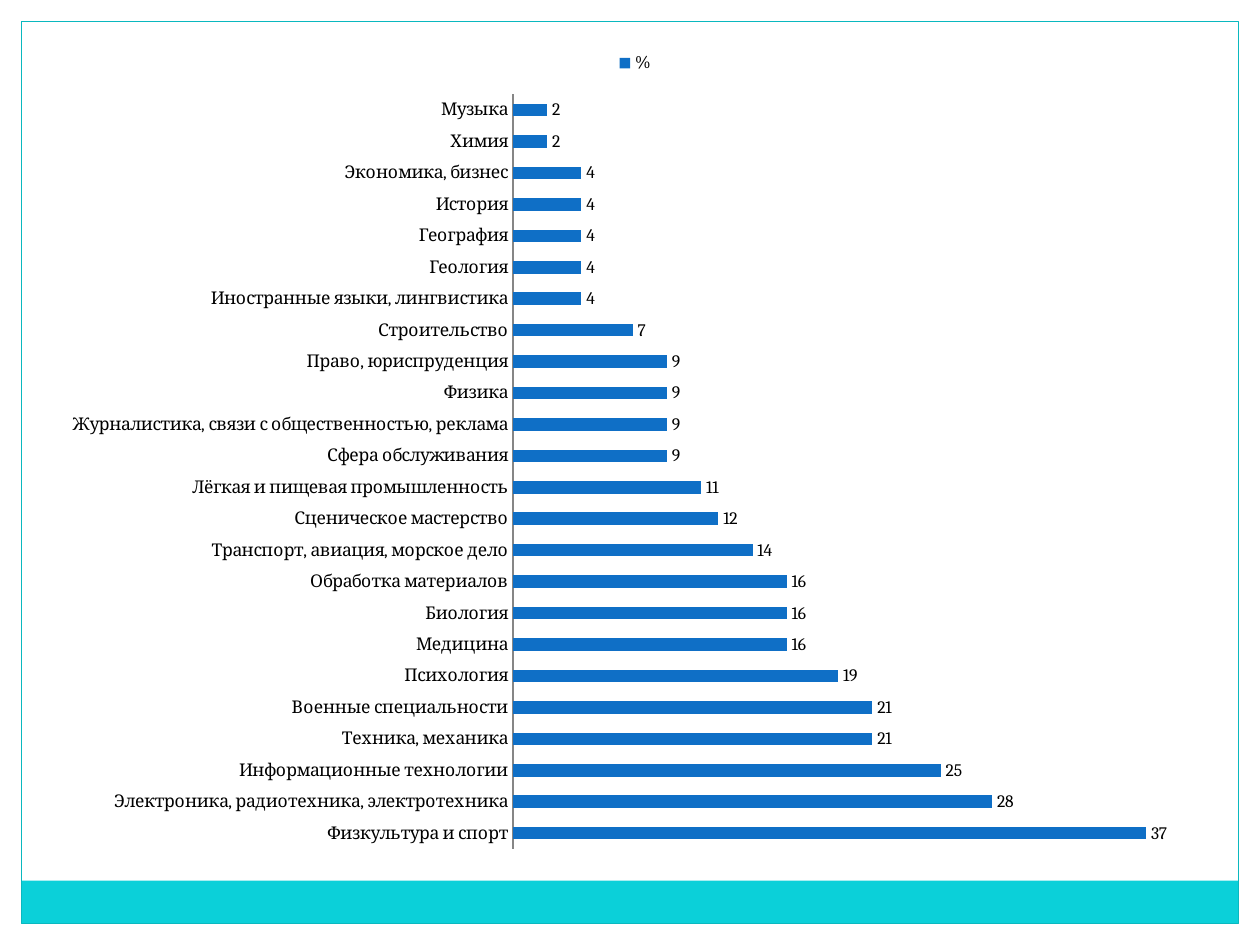
"""Build a slide with a framed bar chart of fields of interest, in percent."""
from pptx import Presentation
from pptx.chart.data import CategoryChartData
from pptx.dml.color import RGBColor
from pptx.enum.chart import XL_CHART_TYPE, XL_LABEL_POSITION, XL_LEGEND_POSITION, XL_TICK_MARK
from pptx.enum.shapes import MSO_SHAPE
from pptx.util import Inches, Pt

BAR = XL_CHART_TYPE.BAR_CLUSTERED
OUTSIDE = XL_LABEL_POSITION.OUTSIDE_END
TOP = XL_LEGEND_POSITION.TOP
NO_TICK = XL_TICK_MARK.NONE
RECTANGLE = MSO_SHAPE.RECTANGLE

THEME = {
    "paper": RGBColor.from_string("FFFFFF"),
    "band": RGBColor.from_string("0BD0D9"),
    "frame": RGBColor.from_string("0AB8BF"),
    "bars": RGBColor.from_string("0F6FC6"),
    "axis": RGBColor.from_string("868686"),
    "text": RGBColor.from_string("000000"),
    "font": "Cambria",
    "size": Pt(10),
    "line": Pt(0.75),
}
WIDTH, HEIGHT = 10, 7.5
MARGIN, BAND = 0.17, 0.34

SHARES = [
    ("Физкультура и спорт", 37),
    ("Электроника, радиотехника, электротехника", 28),
    ("Информационные технологии", 25),
    ("Техника, механика", 21),
    ("Военные специальности", 21),
    ("Психология", 19),
    ("Медицина", 16),
    ("Биология", 16),
    ("Обработка материалов", 16),
    ("Транспорт, авиация, морское дело", 14),
    ("Сценическое мастерство", 12),
    ("Лёгкая и пищевая промышленность", 11),
    ("Сфера обслуживания", 9),
    ("Журналистика, связи с общественностью, реклама", 9),
    ("Физика", 9),
    ("Право, юриспруденция", 9),
    ("Строительство", 7),
    ("Иностранные языки, лингвистика", 4),
    ("Геология", 4),
    ("География", 4),
    ("История", 4),
    ("Экономика, бизнес", 4),
    ("Химия", 2),
    ("Музыка", 2),
]


def set_values(target, values):
    for name, value in values.items():
        setattr(target, name, value)


deck = Presentation()
set_values(deck, {"slide_width": Inches(WIDTH), "slide_height": Inches(HEIGHT)})
page = deck.slides.add_slide(deck.slide_layouts[6])
page.background.fill.solid()
page.background.fill.fore_color.rgb = THEME["paper"]

inner_width, inner_height = WIDTH - 2 * MARGIN, HEIGHT - 2 * MARGIN
panels = [
    (0, HEIGHT - MARGIN, WIDTH, MARGIN, "paper", None),
    (0, 0, WIDTH, MARGIN, "paper", None),
    (WIDTH - MARGIN, 0, MARGIN, HEIGHT, "paper", None),
    (0, 0, MARGIN, HEIGHT, "paper", None),
    (MARGIN, HEIGHT - MARGIN - BAND, inner_width, BAND, "band", None),
    (MARGIN, MARGIN, inner_width, inner_height, None, "frame"),
]
for left, top, width, height, fill, line in panels:
    panel = page.shapes.add_shape(
        RECTANGLE, Inches(left), Inches(top), Inches(width), Inches(height))
    panel.shadow.inherit = False
    if fill:
        panel.fill.solid()
        panel.fill.fore_color.rgb = THEME[fill]
    else:
        panel.fill.background()
    if line:
        panel.line.color.rgb = THEME[line]
        panel.line.width = THEME["line"]
    else:
        panel.line.fill.background()

chart_data = CategoryChartData()
chart_data.categories = [field for field, share in SHARES]
chart_data.add_series("%", [share for field, share in SHARES])
chart = page.shapes.add_chart(
    BAR, Inches(0.39), Inches(0.31), Inches(9.3), Inches(6.56), chart_data).chart
set_values(chart, {"has_title": False, "has_legend": True})
set_values(chart.font, {"name": THEME["font"], "size": THEME["size"]})
chart.font.color.rgb = THEME["text"]
set_values(chart.legend, {"position": TOP, "include_in_layout": False})

set_values(chart.value_axis, {
    "visible": False, "has_major_gridlines": False,
    "minimum_scale": 0, "maximum_scale": 40})
set_values(chart.category_axis, {
    "major_tick_mark": NO_TICK, "minor_tick_mark": NO_TICK, "has_major_gridlines": False})
chart.category_axis.format.line.color.rgb = THEME["axis"]
chart.category_axis.format.line.width = THEME["line"]

plot = chart.plots[0]
set_values(plot, {
    "gap_width": 150, "overlap": -25, "vary_by_categories": False, "has_data_labels": True})
set_values(plot.data_labels, {"show_value": True, "position": OUTSIDE})
bars = plot.series[0]
bars.format.fill.solid()
bars.format.fill.fore_color.rgb = THEME["bars"]

deck.save("out.pptx")
